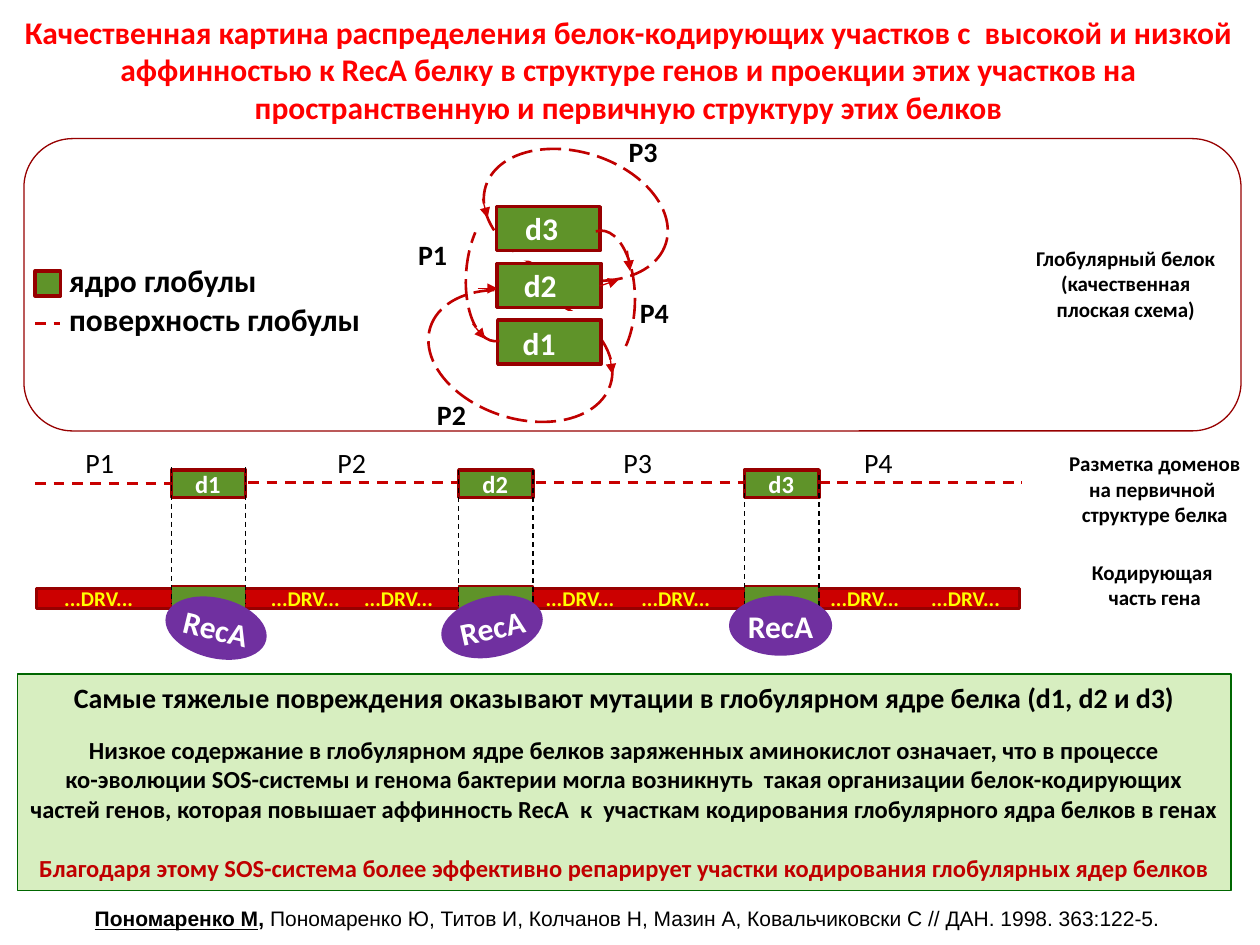
from copy import deepcopy
from lxml.etree import SubElement as Sub
from pptx import Presentation
from pptx.dml.color import RGBColor as RGB
from pptx.enum.dml import MSO_LINE as Dash
from pptx.enum.shapes import MSO_CONNECTOR as Link, MSO_SHAPE as Form
from pptx.enum.text import MSO_ANCHOR as Anchor, MSO_AUTO_SIZE as Fit, PP_ALIGN as Align
from pptx.oxml.ns import qn
from pptx.util import Inches, Pt

HUES = {
    "title": "FF0000", "ink": "000000", "white": "FFFFFF", "note": "C00000",
    "dash": "C80000", "edge": "970000", "core": "5F9329", "gene": "CC0000",
    "codon": "FFFF00", "blob": "7030A0", "pale": "D7EEC0", "rim": "006600",
}
# The slide is a grid of 100 columns by 75 rows; all places are in its cells.
COLS, ROWS = 100, 75
WIDE, TALL = Inches(10), Inches(7.5)
BOLD = {"name": "Calibri", "bold": True}
LEFT, MID = Align.LEFT, Align.CENTER
# Width and height of a two-letter mark by its text size.
MARKS = {14: (4.1, 3.4), 16: (4.4, 3.7), 18: (4.7, 4)}


def hue(name):
    return RGB.from_string(HUES[name])


def cells(x, y):
    return round(x * WIDE / COLS), round(y * TALL / ROWS)


def spot(x, y, w, h):
    return cells(x, y) + cells(w, h)


def style(font, size, tint, form):
    font.size, font.color.rgb = Pt(size), hue(tint)
    for key, val in form.items():
        setattr(font, key, val)


def write(frame, paras, size, tint="ink", align=LEFT, inset=None, wrap=True,
          fit=Fit.SHAPE_TO_FIT_TEXT, form=BOLD):
    """Fill a frame; a paragraph is a string or a dict with text, size, tint, before, runs."""
    frame.word_wrap, frame.auto_size = wrap, fit
    if inset is not None:
        for side in ("left", "top", "right", "bottom"):
            setattr(frame, f"margin_{side}", inset)
    for i, item in enumerate(paras):
        item = {"text": item} if isinstance(item, str) else item
        para = frame.paragraphs[0] if i == 0 else frame.add_paragraph()
        para.alignment = align
        if "before" in item:
            para.space_before = Pt(item["before"])
        for text, extra in item.get("runs") or [(item["text"], {})]:
            for n, line in enumerate(text.split("\n")):
                if n:
                    para.add_line_break()
                run = para.add_run()
                run.text = line
                style(run.font, item.get("size", size), item.get("tint", tint), form | extra)
        for gap in para._p.findall(qn("a:br")):
            gap.append(deepcopy(para.runs[0].font._element))


def label(x, y, w, h, *paras, size=16, **opts):
    box = slide.shapes.add_textbox(*spot(x, y, w, h))
    write(box.text_frame, paras, size, **opts)


def mark(x, y, name, size=16, **opts):
    label(x, y, *MARKS[size], name, size=size, wrap=False, **opts)


def shape(kind, x, y, w, h, fill=None, edge=None, width=2, dash=None, turn=0):
    item = slide.shapes.add_shape(kind, *spot(x, y, w, h))
    item.shadow.inherit, item.rotation = False, turn
    if fill:
        item.fill.solid()
        item.fill.fore_color.rgb = hue(fill)
    else:
        item.fill.background()
    if edge:
        pen(item.line, edge, width, dash)
    else:
        item.line.fill.background()
    return item


def pen(line, tint, width, dash):
    line.color.rgb, line.width = hue(tint), Pt(width)
    if dash:
        line.dash_style = dash


def line(x1, y1, x2, y2, tint="dash", width=0.75, dash=None, arrow=False):
    item = slide.shapes.add_connector(Link.STRAIGHT, *cells(x1, y1), *cells(x2, y2))
    pen(item.line, tint, width, dash)
    if arrow:
        Sub(item.line._get_or_add_ln(), qn("a:tailEnd"), type="triangle")
    Sub(item._element.spPr, qn("a:effectLst"))


def core(x, y, w=8.2, h=3.5):
    shape(Form.RECTANGLE, x, y, w, h, "core", "edge")


def loop(x, y, turn):
    shape(Form.OVAL, x, y, 15, 9.9, edge="note", width=1.5, dash=Dash.LONG_DASH, turn=turn)


def arc(x, y, end, turn=0):
    item = shape(Form.ARC, x, y, 5.4, 10.9, edge="note", width=1.5,
                 dash=Dash.LONG_DASH, turn=turn)
    item.adjustments[0], item.adjustments[1] = 159.39, end


def mask(x, y, h):
    """Hide the part of a loop that runs between two cores."""
    shape(Form.RECTANGLE, x, y, 8.6, h, "white")


def arrows(*ends):
    for end in ends:
        line(*end, arrow=True)


def globule():
    shape(Form.ROUNDED_RECTANGLE, 1.9, 11, 96.6, 23.2, edge="edge", width=0.75)
    label(81, 19.5, 16.7, 6.1, "Глобулярный белок", "(качественная\nплоская схема)",
          size=12, align=MID, inset=0)
    loop(33.8, 23.3, 17.7)
    core(39.4, 20.9)
    core(39.5, 25.4)
    arrows((37.9, 22.9, 39.5, 22.9), (48.4, 28.2, 48.6, 29.7))
    mask(39.4, 24.7, 0.5)
    loop(38.2, 12.1, 197.7)
    core(39.5, 20.9)
    core(39.4, 16.4)
    arrows((47.6, 22.7, 49.1, 22.2), (38.3, 15.8, 38.7, 17.3))
    mask(39.1, 20.1, 0.6)
    arc(45, 18.3, 37.17)
    arc(37, 16.2, 32.02, 185)
    arrows((49.8, 19.9, 50, 21.5), (37.5, 25.7, 38.5, 26.9))
    for x, y, name in [(40.7, 16.1, "d3"), (40.6, 20.6, "d2"), (40.5, 25.2, "d1")]:
        mark(x, y, name, 18, tint="white")
    for x, y, name in [(32.2, 18.4, "P1"), (33.7, 31.1, "P2"),
                       (48.9, 10.2, "P3"), (49.8, 23, "P4")]:
        mark(x, y, name)


def legend():
    core(2.8, 21.5, 2, 2)
    label(4.5, 20.2, 17.1, 4, "ядро глобулы", size=18, wrap=False)
    line(2.8, 25.7, 4.8, 25.7, width=1.5, dash=Dash.DASH)
    label(4.5, 23.3, 25.9, 4, "поверхность глобулы", size=18)


def chain():
    """Draw the protein chain, the gene below it and the links between them."""
    wide = 5.9
    sites = [("d1", 13.6, 37.1, 13.2, 47.6, 13.6), ("d2", 36.4, 37.3, 35.1, 47.5, 347.4),
             ("d3", 59.1, 37.7, 58, 47.4, 0)]
    for x1, x2, y in [(2.8, 13.8, 38.4), (19.7, 37, 38.3), (42.5, 59.1, 38.3), (65, 81.1, 38.3)]:
        line(x1, y, x2, y, width=1.5, dash=Dash.DASH)
    for x, name in [(5.8, "P1"), (25.8, "P2"), (48.5, "P3"), (67.6, "P4")]:
        mark(x, 34.9, name, form={"name": "Calibri"})
    shape(Form.RECTANGLE, 2.9, 46.7, 78, 1.6, "gene", "edge")
    for name, x, top, *_ in sites:
        core(x, 37.3, wide, 2.2)
        mark(x + 0.9, 36.7, name, 14, tint="white")
        shape(Form.RECTANGLE, x, 46.5, wide, 1.8, "core", "edge", 0.75)
    for x in (5.1, 21.5, 28.9, 43.3, 50.9, 65.9, 73.9):
        label(x, 46.5, 5.6, 2, "...DRV...", size=12, tint="codon", inset=0, wrap=False)
    for _, x, top, left, high, turn in sites:
        for side in (x, x + wide):
            line(side, top, side, top + 10.8, "ink", dash=Dash.DASH)
        blob = shape(Form.OVAL, left, high, 7.9, 4.5, "blob", "blob", turn=turn)
        blob.text_frame.vertical_anchor = Anchor.MIDDLE
        write(blob.text_frame, ["RecA"], 18, "white", MID, 0, fit=Fit.NONE)
    label(83.8, 35.3, 15.7, 7.1, "Разметка доменов", "на первичной ", "структуре белка",
          size=12, align=MID, wrap=False)
    label(85.6, 43.9, 12.1, 5, "Кодирующая ", "часть гена", size=12, align=MID, wrap=False)


def summary():
    box = shape(Form.RECTANGLE, 1.4, 53.5, 96.3, 17.2, "pale", "rim", 0.75)
    box.text_frame.vertical_anchor = Anchor.TOP
    write(box.text_frame, [
        {"text": "Самые тяжелые повреждения оказывают мутации в глобулярном ядре белка "
                 "(d1, d2 и d3)", "size": 16},
        {"text": "Низкое содержание в глобулярном ядре белков заряженных аминокислот означает, "
                 "что в процессе\nко-эволюции SOS-системы и генома бактерии могла возникнуть  "
                 "такая организации белок-кодирующих частей генов, которая повышает аффинность "
                 "RecA  к  участкам кодирования глобулярного ядра белков в генах", "before": 12},
        {"text": "Благодаря этому SOS-система более эффективно репарирует участки кодирования "
                 "глобулярных ядер белков", "tint": "note", "before": 17},
    ], 14, align=MID)


def main():
    label(-0.8, 0.5, 101.4, 10.1,
          "Качественная картина распределения белок-кодирующих участков с  высокой и низкой "
          "аффинностью к RecA белку в структуре генов и проекции этих участков на "
          "пространственную и первичную структуру этих белков",
          size=18, tint="title", align=MID)
    summary()
    globule()
    legend()
    chain()
    cite = [("Пономаренко М", {"bold": True, "underline": True}), (", ", {"bold": True}),
            ("Пономаренко Ю, Титов И, Колчанов Н, Мазин А, Ковальчиковски С "
             "// ДАН. 1998. 363:122-5. ", {})]
    label(3.6, 71.9, 92.9, 2, {"runs": cite}, size=12, align=MID, inset=0,
          form={"name": "Arial", "bold": False})
    deck.save("out.pptx")


if __name__ == "__main__":
    deck = Presentation()
    deck.slide_width, deck.slide_height = WIDE, TALL
    slide = deck.slides.add_slide(deck.slide_layouts[6])
    main()
